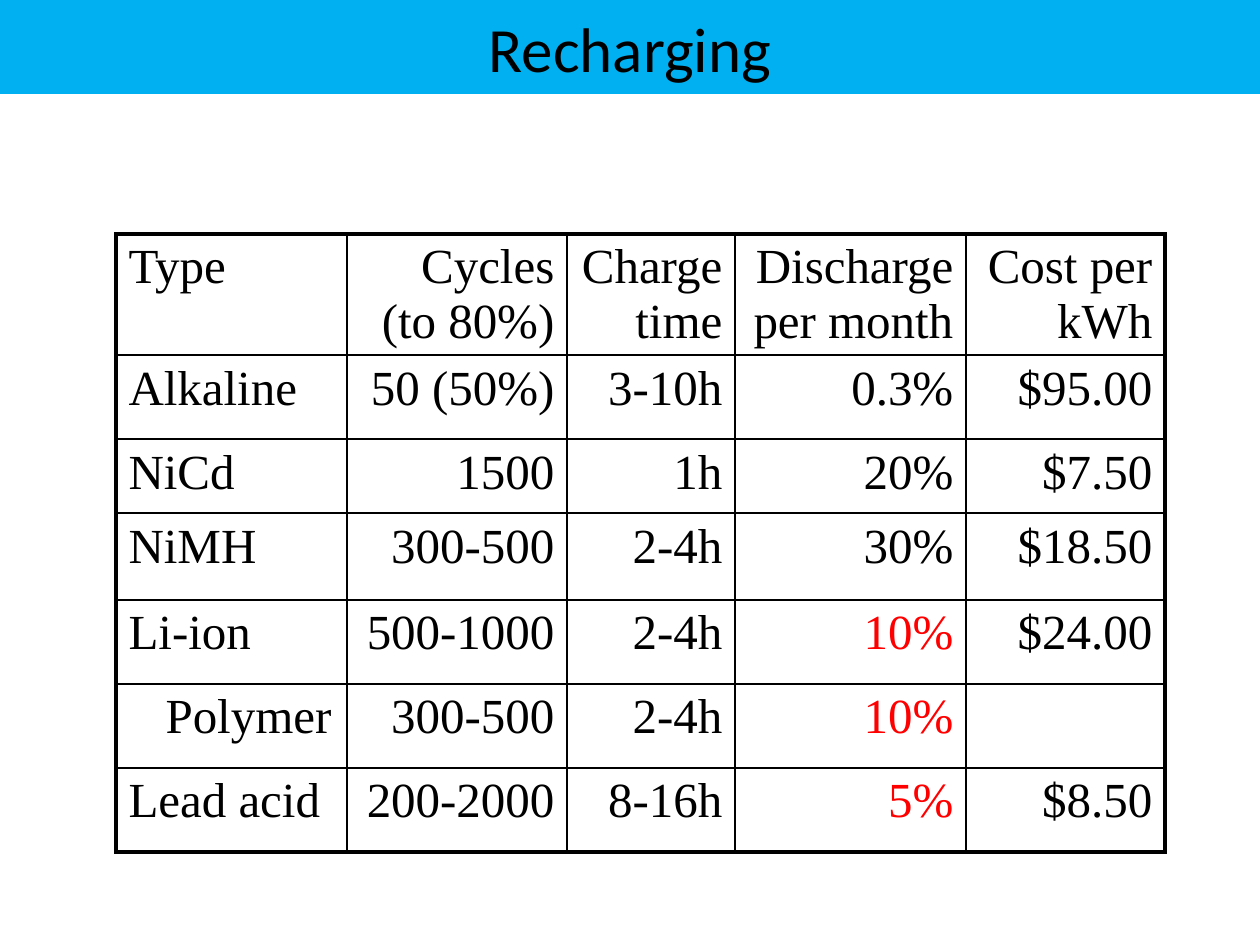
from dataclasses import dataclass

from lxml.etree import SubElement
from pptx import Presentation
from pptx.dml.color import RGBColor
from pptx.enum.text import MSO_ANCHOR, PP_ALIGN
from pptx.oxml.ns import qn
from pptx.util import Pt

PX = 914400 / 126  # EMU in one px


@dataclass(frozen=True)
class Theme:
    banner: RGBColor = RGBColor(0x00, 0xB0, 0xF0)
    ink: RGBColor = RGBColor(0x00, 0x00, 0x00)
    accent: RGBColor = RGBColor(0xFF, 0x00, 0x00)
    title_font: str = "Calibri"
    table_font: str = "Times New Roman"
    title_size: int = 36
    table_size: int = 28
    outer_line: float = 2.25
    inner_line: float = 1


THEME = Theme()

BATTERIES = [
    ["Type", "Cycles (to 80%)", "Charge time", "Discharge per month", "Cost per kWh"],
    ["Alkaline", "50 (50%)", "3-10h", "0.3%", "$95.00"],
    ["NiCd", "1500", "1h", "20%", "$7.50"],
    ["NiMH", "300-500", "2-4h", "30%", "$18.50"],
    ["Li-ion", "500-1000", "2-4h", "10%", "$24.00"],
    ["Polymer", "300-500", "2-4h", "10%", ""],
    ["Lead acid", "200-2000", "8-16h", "5%", "$8.50"],
]
COLUMN_WIDTHS = [231, 220, 168, 231, 199]
ROW_HEIGHTS = [121, 84, 74, 87, 84, 84, 84]
DISCHARGE = 3
HIGHLIGHTED = {"Li-ion", "Polymer", "Lead acid"}
SUBTYPES = {"Polymer"}
SUBTYPE_INDENT = 37


def px(length):
    return round(length * PX)


def style_paragraph(paragraph, font, size, color, align):
    paragraph.alignment = align
    paragraph.font.name = font
    paragraph.font.size = Pt(size)
    paragraph.font.color.rgb = color


def add_banner(slide, text, left, top, width, height):
    title = slide.shapes.title
    title.left, title.top, title.width, title.height = map(px, (left, top, width, height))
    title.fill.solid()
    title.fill.fore_color.rgb = THEME.banner
    title.text_frame.text = text
    title.text_frame.vertical_anchor = MSO_ANCHOR.MIDDLE
    style_paragraph(title.text_frame.paragraphs[0], THEME.title_font,
                    THEME.title_size, THEME.ink, PP_ALIGN.CENTER)


def draw_borders(cell, outer_sides):
    """Rule all four sides, heavier along the table's outer edge."""
    properties = cell._tc.get_or_add_tcPr()
    for side in "LRTB":
        weight = THEME.outer_line if side in outer_sides else THEME.inner_line
        line = SubElement(properties, qn(f"a:ln{side}"), w=str(Pt(weight)))
        fill = SubElement(line, qn("a:solidFill"))
        SubElement(fill, qn("a:srgbClr"), val=str(THEME.ink))


def add_battery_table(slide, left, top):
    rows, columns = len(BATTERIES), len(COLUMN_WIDTHS)
    table = slide.shapes.add_table(rows, columns, px(left), px(top),
                                   px(sum(COLUMN_WIDTHS)), px(sum(ROW_HEIGHTS))).table
    table.first_row = table.horz_banding = False
    for column, width in zip(table.columns, COLUMN_WIDTHS):
        column.width = px(width)
    for row, height in zip(table.rows, ROW_HEIGHTS):
        row.height = px(height)

    for r, battery in enumerate(BATTERIES):
        for c, text in enumerate(battery):
            cell = table.cell(r, c)
            cell.text = text
            red = c == DISCHARGE and battery[0] in HIGHLIGHTED
            paragraph = cell.text_frame.paragraphs[0]
            style_paragraph(paragraph, THEME.table_font, THEME.table_size,
                            THEME.accent if red else THEME.ink,
                            PP_ALIGN.RIGHT if c else PP_ALIGN.LEFT)
            if text in SUBTYPES:
                paragraph._p.get_or_add_pPr().set("marL", str(px(SUBTYPE_INDENT)))
            edges = {"L": c == 0, "R": c == columns - 1, "T": r == 0, "B": r == rows - 1}
            draw_borders(cell, {side for side, outer in edges.items() if outer})
            cell.fill.background()


def main():
    deck = Presentation()
    deck.slide_width, deck.slide_height = px(1260), px(945)
    slide = deck.slides.add_slide(deck.slide_layouts.get_by_name("Title Only"))
    add_banner(slide, "Recharging", 0, 0, 1260, 94)
    add_battery_table(slide, 116, 234)
    deck.save("out.pptx")


if __name__ == "__main__":
    main()
